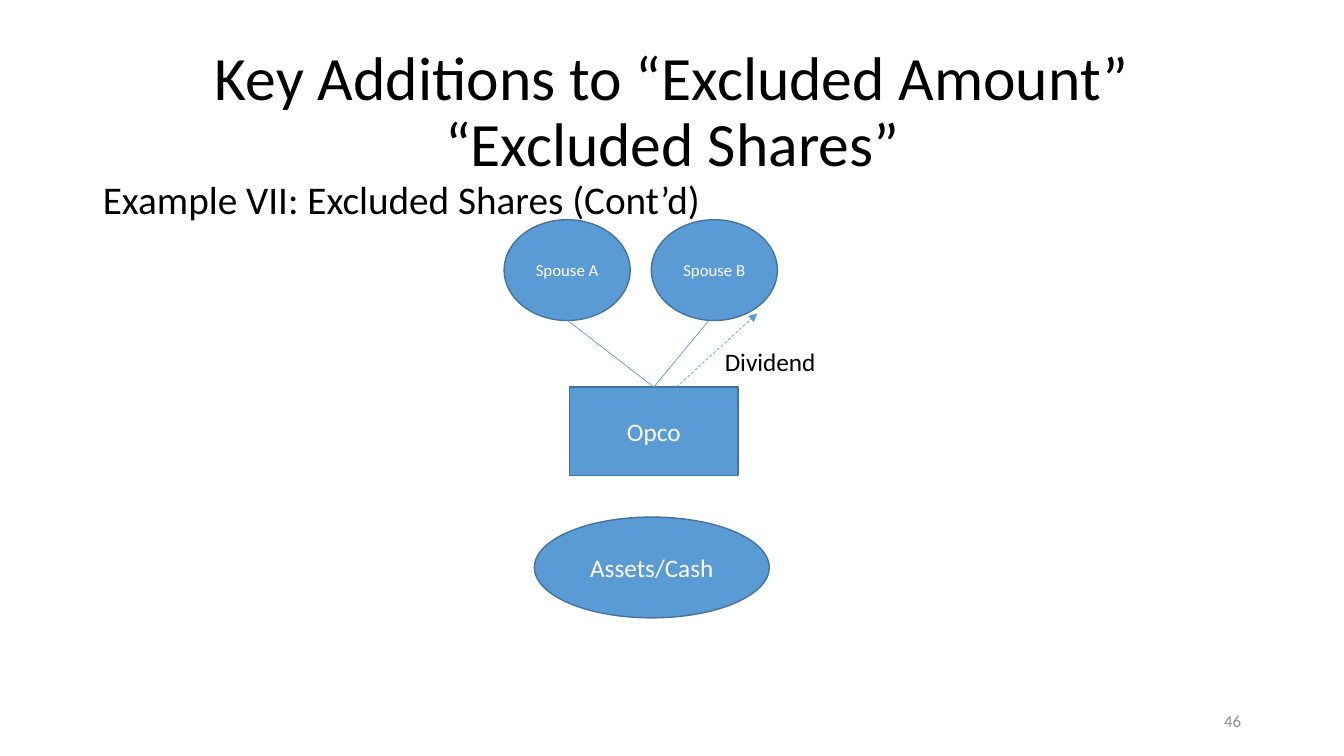
from lxml.etree import SubElement
from pptx import Presentation
from pptx.dml.color import RGBColor
from pptx.enum.dml import MSO_LINE
from pptx.enum.shapes import MSO_CONNECTOR, MSO_SHAPE
from pptx.enum.text import MSO_ANCHOR, MSO_AUTO_SIZE, PP_ALIGN
from pptx.oxml.ns import qn
from pptx.util import Pt

PX = 9144  # 100 px to the inch
BLACK = RGBColor(0x00, 0x00, 0x00)
WHITE = RGBColor(0xFF, 0xFF, 0xFF)
GRAY = RGBColor(0x8C, 0x8C, 0x8C)
BLUE = RGBColor(0x5B, 0x9B, 0xD5)
EDGE = RGBColor(0x43, 0x73, 0x9E)


def write(shape, text, size=18, color=BLACK, align=PP_ALIGN.LEFT,
          anchor=MSO_ANCHOR.MIDDLE, space=1.0, plain=False):
    """Fill a shape with one formatted paragraph; plain drops its bullet."""
    frame = shape.text_frame
    frame.word_wrap = True
    frame.auto_size = MSO_AUTO_SIZE.NONE
    frame.vertical_anchor = anchor
    para = frame.paragraphs[0]
    para.text = text
    if plain:
        props = para._p.get_or_add_pPr()
        props.set("marL", "0")
        props.set("indent", "0")
        SubElement(props, qn("a:buNone"))
    para.alignment = align
    para.line_spacing = space
    para.space_before = Pt(0)
    for run in para.runs:
        run.font.name = "Calibri"
        run.font.size = Pt(size)
        run.font.color.rgb = color


def place(shape, *box):
    shape.left, shape.top, shape.width, shape.height = [n * PX for n in box]


deck = Presentation()
deck.slide_width, deck.slide_height = 1333 * PX, 750 * PX
slide = deck.slides.add_slide(deck.slide_layouts[1])
shapes = slide.shapes

# Title and heading
title, body = shapes.title, slide.placeholders[1]
place(title, 92, 40, 1150, 145)
write(title, "Key Additions to “Excluded Amount”\v“Excluded Shares”",
      size=44, align=PP_ALIGN.CENTER, space=0.9)
place(body, 92, 174, 1150, 476)
write(body, "Example VII: Excluded Shares (Cont’d)", size=28,
      anchor=MSO_ANCHOR.TOP, space=0.9, plain=True)

# Spouses, company and its assets
nodes = {}
for name, kind, size, box in [
    ("Opco", MSO_SHAPE.RECTANGLE, 18, (565, 384, 167, 88)),
    ("Spouse A", MSO_SHAPE.OVAL, 12, (500, 218, 125, 100)),
    ("Spouse B", MSO_SHAPE.OVAL, 12, (646, 218, 125, 100)),
    ("Assets/Cash", MSO_SHAPE.OVAL, 18, (530, 513, 233, 100)),
]:
    node = shapes.add_shape(kind, *[n * PX for n in box])
    node.shadow.inherit = False
    node.fill.solid()
    node.fill.fore_color.rgb = BLUE
    node.line.color.rgb = EDGE
    node.line.width = Pt(1)
    write(node, name, size=size, color=WHITE, align=PP_ALIGN.CENTER)
    nodes[name] = node

# Share holdings (solid) and the dividend (dashed arrow)
for ends, paid in [
    ((563, 318, 648, 384), False),
    ((703, 318, 648, 384), False),
    ((671, 384, 751, 311), True),
]:
    link = shapes.add_connector(MSO_CONNECTOR.STRAIGHT, *[n * PX for n in ends])
    link.line.color.rgb = BLUE
    link.line.width = Pt(0.5)
    if paid:
        link.line.dash_style = MSO_LINE.DASH
        SubElement(link.line._get_or_add_ln(), qn("a:tailEnd"), type="triangle")
    else:
        link.end_connect(nodes["Opco"], 0)
    SubElement(link._element.spPr, qn("a:effectLst"))

# Dividend label and page number
for text, box, form in [
    ("Dividend", (709, 339, 130, 40), {}),
    ("46", (941, 695, 300, 40),
     {"size": 12, "color": GRAY, "align": PP_ALIGN.RIGHT}),
]:
    label = shapes.add_textbox(*[n * PX for n in box])
    write(label, text, **form)

deck.save("out.pptx")
